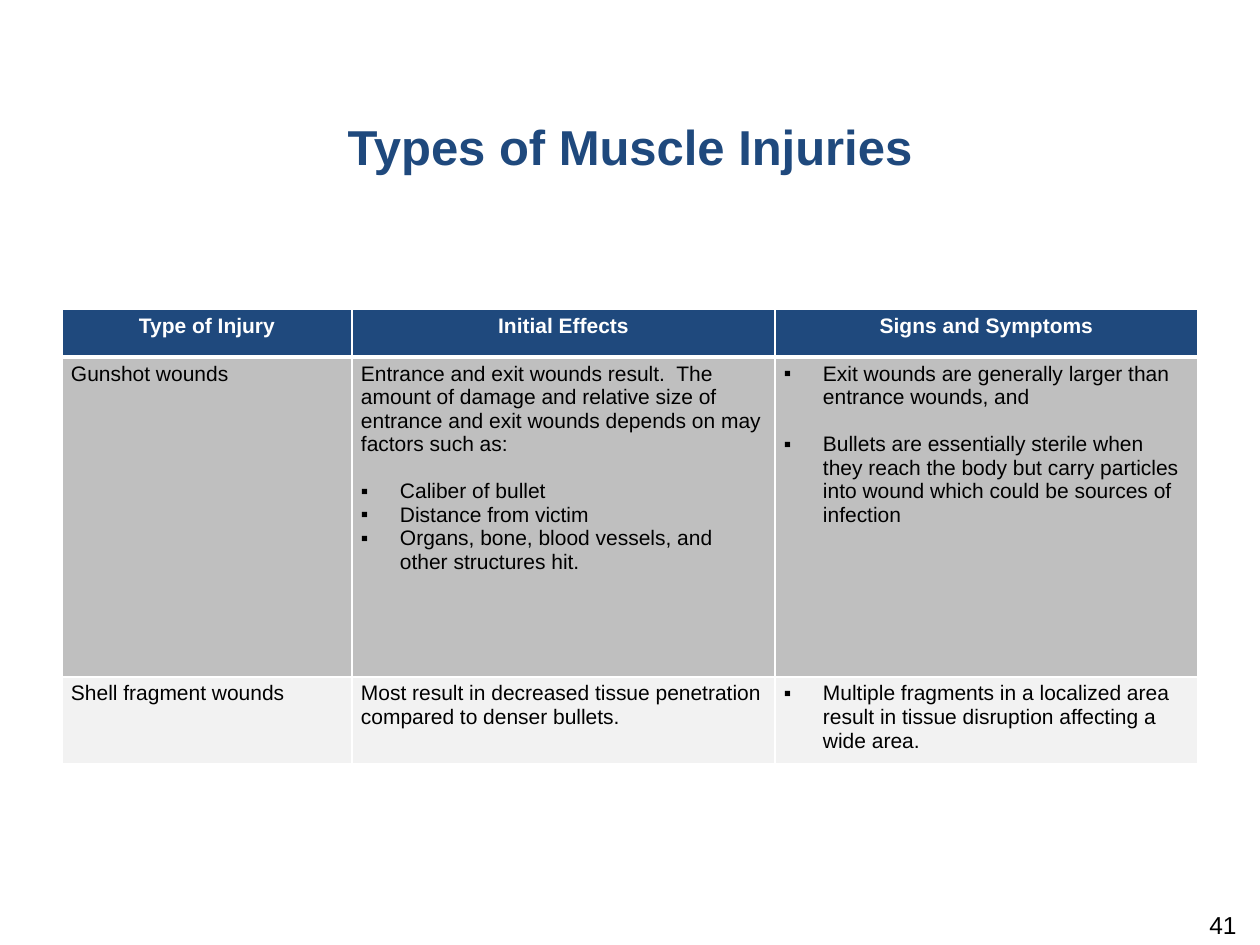
from lxml import etree
from pptx import Presentation
from pptx.dml.color import RGBColor
from pptx.enum.text import MSO_ANCHOR, MSO_AUTO_SIZE, PP_ALIGN
from pptx.oxml.ns import qn
from pptx.util import Emu, Pt

TOP, NO_FIT = MSO_ANCHOR.TOP, MSO_AUTO_SIZE.NONE
LEFT, CENTER, RIGHT = PP_ALIGN.LEFT, PP_ALIGN.CENTER, PP_ALIGN.RIGHT
PX = 914400 / 126
COLORS = {"navy": "1F497D", "white": "FFFFFF", "black": "000000",
          "gray": "BFBFBF", "pale": "F2F2F2"}
INDENT = 39
GAP = 13.4


def px(length):
    return Emu(round(length * PX))


def write(para, text, size, color, bold=False, align=LEFT):
    para.alignment = align
    span = para.add_run()
    span.text = text
    for name, value in {"name": "Arial", "size": Pt(size), "bold": bold}.items():
        setattr(span.font, name, value)
    span.font.color.rgb = RGBColor.from_string(COLORS[color])


deck = Presentation()
deck.slide_width, deck.slide_height = px(1260), px(945)
page = deck.slides.add_slide(deck.slide_layouts[5])

# Title
title = page.shapes.title
title.left, title.top, title.width, title.height = px(0), px(110), px(1260), px(150)
title.text_frame.auto_size = NO_FIT
title.text_frame.vertical_anchor = TOP
title_para = title.text_frame.paragraphs[0]
title_para.space_after = Pt(6)
write(title_para, "Types of Muscle Injuries", 28, "navy", True, CENTER)

# Page number
number_box = page.shapes.add_textbox(px(955), px(910), px(294), px(50))
number_box.text_frame.word_wrap = True
number_box.text_frame.margin_top = 0
write(number_box.text_frame.paragraphs[0], "41", 14, "black", align=RIGHT)

# Table content: each paragraph is (text, bulleted, gap before)
rows = [
    [[("Type of Injury", False, False)],
     [("Initial Effects", False, False)],
     [("Signs and Symptoms", False, False)]],
    [[("Gunshot wounds", False, False)],
     [("Entrance and exit wounds result.  The amount of damage and relative size "
       "of entrance and exit wounds depends on may factors such as:", False, False),
      ("Caliber of bullet", True, True),
      ("Distance from victim", True, False),
      ("Organs, bone, blood vessels, and other structures hit.", True, False)],
     [("Exit wounds are generally larger than entrance wounds, and", True, False),
      ("Bullets are essentially sterile when they reach the body but carry particles "
       "into wound which could be sources of infection", True, True)]],
    [[("Shell fragment wounds", False, False)],
     [("Most result in decreased tissue penetration compared to denser bullets.",
       False, False)],
     [("Multiple fragments in a localized area result in tissue disruption "
       "affecting a wide area.", True, False)]],
]
# Fill, text colour, bold, alignment, top and bottom border points
row_styles = [("navy", "white", True, CENTER, 1, 3),
              ("gray", "black", False, LEFT, 3, 1),
              ("pale", "black", False, LEFT, 1, 1)]
column_widths = [290, 423, 423]
row_heights = [48, 320, 87]

table = page.shapes.add_table(3, 3, px(62), px(309), px(sum(column_widths)),
                              px(sum(row_heights))).table
table.horz_banding = False
for column, width in zip(table.columns, column_widths):
    column.width = px(width)

for row, height, contents, style in zip(table.rows, row_heights, rows, row_styles):
    row.height = px(height)
    fill, color, bold, align, top_line, bottom_line = style
    for cell, content in zip(row.cells, contents):
        cell.fill.solid()
        cell.fill.fore_color.rgb = RGBColor.from_string(COLORS[fill])
        cell.vertical_anchor = TOP
        for side, margin in {"left": 9, "right": 9, "top": 5, "bottom": 5}.items():
            setattr(cell, f"margin_{side}", px(margin))

        # Borders come before the fill in the cell properties
        properties = cell._tc.get_or_add_tcPr()
        borders = [("lnL", 1), ("lnR", 1), ("lnT", top_line), ("lnB", bottom_line)]
        for position, (tag, points) in enumerate(borders):
            line = etree.Element(qn(f"a:{tag}"), w=str(Pt(points)))
            solid = etree.SubElement(line, qn("a:solidFill"))
            etree.SubElement(solid, qn("a:srgbClr"), val=COLORS["white"])
            properties.insert(position, line)

        # Paragraphs
        frame = cell.text_frame
        for index, (text, bulleted, gap) in enumerate(content):
            para = frame.add_paragraph() if index else frame.paragraphs[0]
            if bulleted:
                settings = para._p.get_or_add_pPr()
                settings.set("marL", str(px(INDENT)))
                settings.set("indent", str(-px(INDENT)))
                etree.SubElement(settings, qn("a:buFont"), typeface="Arial")
                etree.SubElement(settings, qn("a:buChar"), char="▪")
            if gap:
                para.space_before = Pt(GAP)
            write(para, text, 12, color, bold, align)

deck.save("out.pptx")
